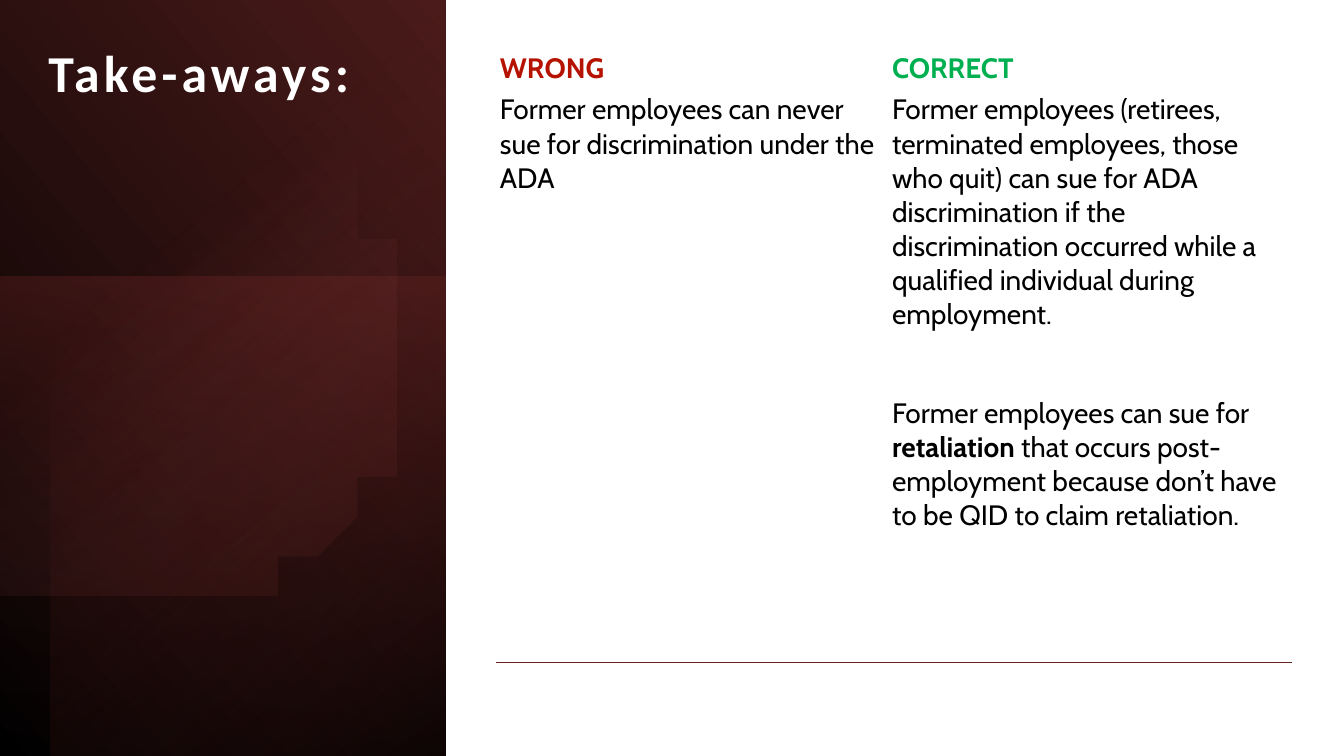
from dataclasses import dataclass
from math import acos, cos, sin

from pptx import Presentation
from pptx.dml.color import RGBColor
from pptx.enum.shapes import MSO_SHAPE
from pptx.enum.text import MSO_ANCHOR as Anchor
from pptx.oxml.ns import qn
from pptx.util import Cm, Pt
from lxml.etree import SubElement

COLORS = {
    "black": "000000", "white": "FFFFFF", "maroon": "4A1B1A", "wine": "632423",
    "dark_wine": "321212", "rose": "C45A58", "red": "B51200", "green": "00B050",
}


@dataclass
class Stop:
    position: float
    color: str
    opacity: int = 100


@dataclass
class Panel:
    left: float
    top: float
    width: float
    height: float
    rotation: int
    flipped: bool
    angle: int
    stops: tuple[Stop, Stop]


@dataclass
class Column:
    width: float
    heading: str
    color: str
    paragraphs: list[list[tuple[str, bool]]]


PANELS = [
    Panel(-3.94, 3.94, 19.1, 11.23, 90, True, 310,
          (Stop(0, "black"), Stop(1, "maroon"))),
    Panel(-0.43, 7.39, 12.09, 11.23, 270, False, 190,
          (Stop(0, "wine", 50), Stop(1, "dark_wine", 0))),
    Panel(-3.28, 4.55, 19.05, 9.96, 270, True, 220,
          (Stop(0, "black", 59), Stop(0.69, "wine", 0))),
]
CIRCLE_STOPS = (Stop(0.39, "rose", 0), Stop(1, "maroon", 26))

COLUMNS = [
    Column(9.88, "WRONG", "red", [
        [("Former employees can never sue for discrimination under the ADA", False)],
    ]),
    Column(10.19, "CORRECT", "green", [
        [("Former employees (retirees, terminated employees, those who quit) can sue "
          "for ADA discrimination if the discrimination occurred while a qualified "
          "individual during employment.", False)],
        [("Former employees can sue for ", False), ("retaliation", True),
         (" that occurs post-employment because don’t have to be QID to claim "
          "retaliation.", False)],
    ]),
]


def rgb(name: str) -> RGBColor:
    return RGBColor.from_string(COLORS[name])


def paint(s, stops: tuple[Stop, Stop], angle: int) -> None:
    """Fill a shape with a two-stop gradient at a clockwise angle, without outline."""
    s.shadow.inherit = False
    s.line.fill.background()
    s.fill.gradient()
    s.fill.gradient_angle = 360 - angle
    for gs, stop in zip(s.fill.gradient_stops, stops):
        gs.position = stop.position
        gs.color.rgb = rgb(stop.color)
    for clr, stop in zip(s._element.xpath("./p:spPr/a:gradFill//a:srgbClr"), stops):
        SubElement(clr, qn("a:alpha"), val=str(stop.opacity * 1000))


def add_panel(slide, panel: Panel) -> None:
    s = slide.shapes.add_shape(MSO_SHAPE.RECTANGLE, Cm(panel.left), Cm(panel.top),
                               Cm(panel.width), Cm(panel.height))
    s.rotation = panel.rotation
    if panel.flipped:
        s._element.spPr.xfrm.set("flipH", "1")
    paint(s, panel.stops, panel.angle)


def add_clipped_circle(slide, x: float, y: float, radius: float) -> None:
    """Draw a circle cut off straight at the slide's left edge."""
    end, steps = acos(-x / radius), 120
    angles = [end * (2 * i / steps - 1) for i in range(steps + 1)]
    points = [(x + radius * cos(a), y + radius * sin(a)) for a in angles]
    builder = slide.shapes.build_freeform(*points[0], scale=Cm(1))
    builder.add_line_segments(points[1:], close=True)
    paint(builder.convert_to_shape(), CIRCLE_STOPS, 52)


def add_title(slide, text: str) -> None:
    tf = slide.shapes.add_textbox(Cm(0.97), Cm(1.07), Cm(9.4), Cm(8.53)).text_frame
    tf.word_wrap = True
    p = tf.paragraphs[0]
    p.line_spacing = 0.9
    r = p.add_run()
    r.text = text
    r.font._element.set("spc", "300")
    p.font.name, p.font.size, p.font.bold = "Calibri", Pt(37), True
    p.font.color.rgb = rgb("white")


def set_borders(cell, bottom: str | None) -> None:
    tc_pr = cell._tc.get_or_add_tcPr()
    for index, side in enumerate(("lnL", "lnR", "lnT", "lnB")):
        ln = tc_pr.makeelement(qn(f"a:{side}"), {"w": str(Pt(1))})
        tc_pr.insert(index, ln)
        if side == "lnB" and bottom:
            fill = SubElement(ln, qn("a:solidFill"))
            SubElement(fill, qn("a:srgbClr"), val=COLORS[bottom])
        else:
            SubElement(ln, qn("a:noFill"))


def fill_cell(cell, paragraphs: list[list[tuple[str, bool]]], color: str,
              anchor: Anchor, bottom: str | None = None) -> None:
    cell.fill.background()
    set_borders(cell, bottom)
    cell.margin_left = cell.margin_right = Cm(0.1)
    cell.margin_top, cell.margin_bottom = 0, Cm(0.18)
    cell.vertical_anchor = anchor
    tf = cell.text_frame
    for index, runs in enumerate(paragraphs):
        p = tf.add_paragraph() if index else tf.paragraphs[0]
        if index:
            p.space_before = Pt(46)
        for text, bold in runs:
            r = p.add_run()
            r.text = text
            r.font.bold = bold
        p.font.name, p.font.size = "Cabin", Pt(20)
        p.font.color.rgb = rgb(color)


def add_comparison(slide) -> None:
    heights = (1.7, 14.35)
    width = sum(column.width for column in COLUMNS)
    table = slide.shapes.add_table(2, len(COLUMNS), Cm(12.5), Cm(0.64),
                                   Cm(width), Cm(sum(heights))).table
    table.first_row = table.horz_banding = False
    for row, height in zip(table.rows, heights):
        row.height = Cm(height)
    for i, column in enumerate(COLUMNS):
        table.columns[i].width = Cm(column.width)
        fill_cell(table.cell(0, i), [[(column.heading, True)]], column.color,
                  Anchor.BOTTOM)
        fill_cell(table.cell(1, i), column.paragraphs, "black", Anchor.TOP, "wine")


def main() -> None:
    prs = Presentation()
    prs.slide_width, prs.slide_height = Cm(33.87), Cm(19.05)
    slide = prs.slides.add_slide(prs.slide_layouts[6])
    for panel in PANELS:
        add_panel(slide, panel)
    add_clipped_circle(slide, 3.63, 8.81, 6.68)
    add_title(slide, "Take-aways:")
    add_comparison(slide)
    prs.save("out.pptx")


if __name__ == "__main__":
    main()
